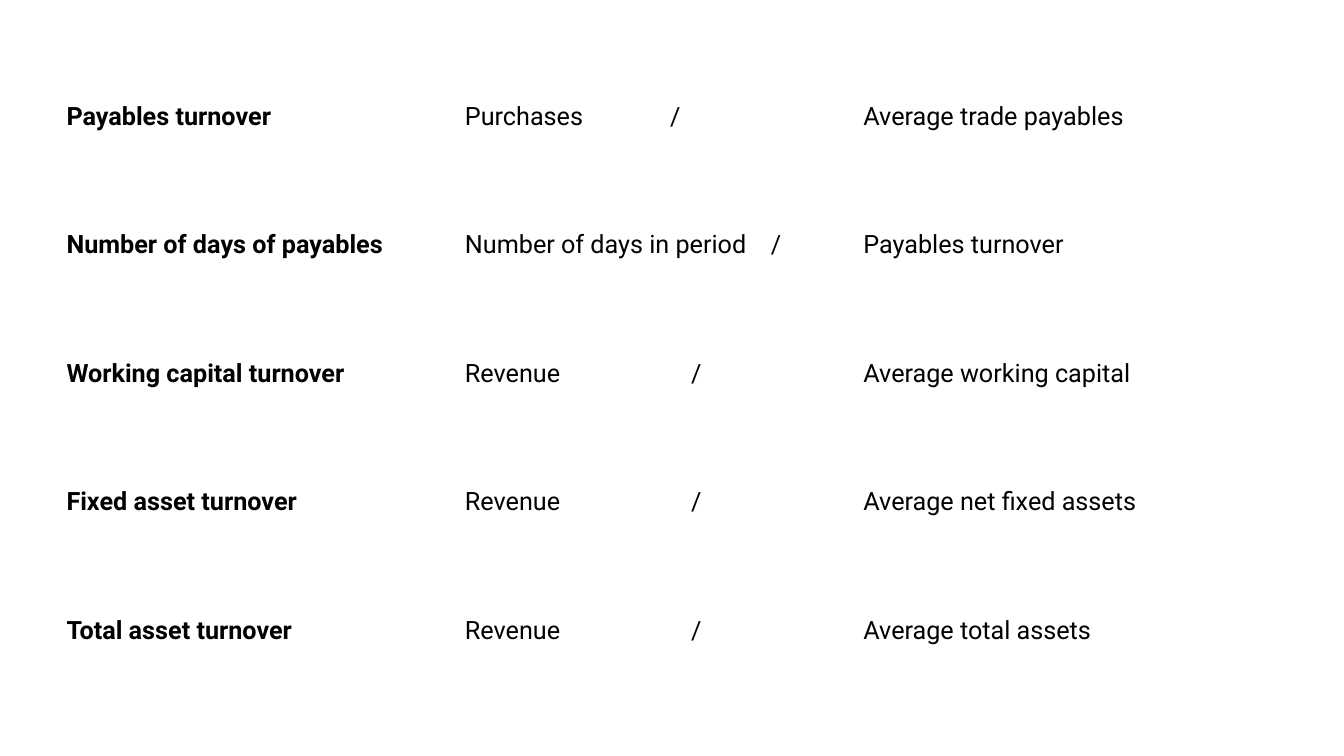
from dataclasses import dataclass

from lxml import etree
from pptx import Presentation
from pptx import util as u
from pptx.dml import color
from pptx.oxml import ns
from pptx.table import _Cell

COLORS = {"text": "000000"}
FONT = "Roboto"
SIZE = 18
MARGIN = 7.2
LEFT, TOP = 40.3, 65.5
COL_W, ROW_H = 284.6, 91.8


@dataclass
class Ratio:
    name: str
    numerator: str
    slash_at: float  # tab stop of the division sign, in points
    denominator: str


RATIOS = [
    Ratio("Payables turnover", "Purchases", 146.5, "Average trade payables"),
    Ratio("Number of days of payables", "Number of days in period", 218.5,
          "Payables turnover"),
    Ratio("Working capital turnover", "Revenue", 161.5, "Average working capital"),
    Ratio("Fixed asset turnover", "Revenue", 161.5, "Average net fixed assets"),
    Ratio("Total asset turnover", "Revenue", 161.5, "Average total assets"),
]


def add_tab_stop(p, pos: float) -> None:
    tabs = etree.SubElement(p._p.get_or_add_pPr(), ns.qn("a:tabLst"))
    etree.SubElement(tabs, ns.qn("a:tab"), pos=str(int(u.Pt(pos))), algn="l")


def fill_cell(cell: _Cell, content: str, bold: bool = False) -> None:
    cell.fill.background()
    cell.margin_left = cell.margin_right = u.Pt(MARGIN)
    cell.margin_top = cell.margin_bottom = u.Pt(MARGIN)
    p = cell.text_frame.paragraphs[0]
    p.text = content
    for r in p.runs:
        r.font.name = FONT
        r.font.size = u.Pt(SIZE)
        r.font.bold = bold
        r.font.color.rgb = color.RGBColor.from_string(COLORS["text"])


def main() -> None:
    prs = Presentation()
    prs.slide_width, prs.slide_height = u.Pt(960), u.Pt(540)
    s = prs.slides.add_slide(prs.slide_layouts[6])

    # Table without header or banding
    table = s.shapes.add_table(
        len(RATIOS), 3, u.Pt(LEFT), u.Pt(TOP),
        u.Pt(3 * COL_W), u.Pt(len(RATIOS) * ROW_H)).table
    table.first_row = table.horz_banding = False
    for col in table.columns:
        col.width = u.Pt(COL_W)

    # One ratio per row: name, numerator and slash, denominator
    for i, ratio in enumerate(RATIOS):
        table.rows[i].height = u.Pt(ROW_H)
        fill_cell(table.cell(i, 0), ratio.name, bold=True)
        fill_cell(table.cell(i, 1), f"{ratio.numerator}\t/")
        add_tab_stop(table.cell(i, 1).text_frame.paragraphs[0], ratio.slash_at)
        fill_cell(table.cell(i, 2), ratio.denominator)

    prs.save("out.pptx")


if __name__ == "__main__":
    main()
